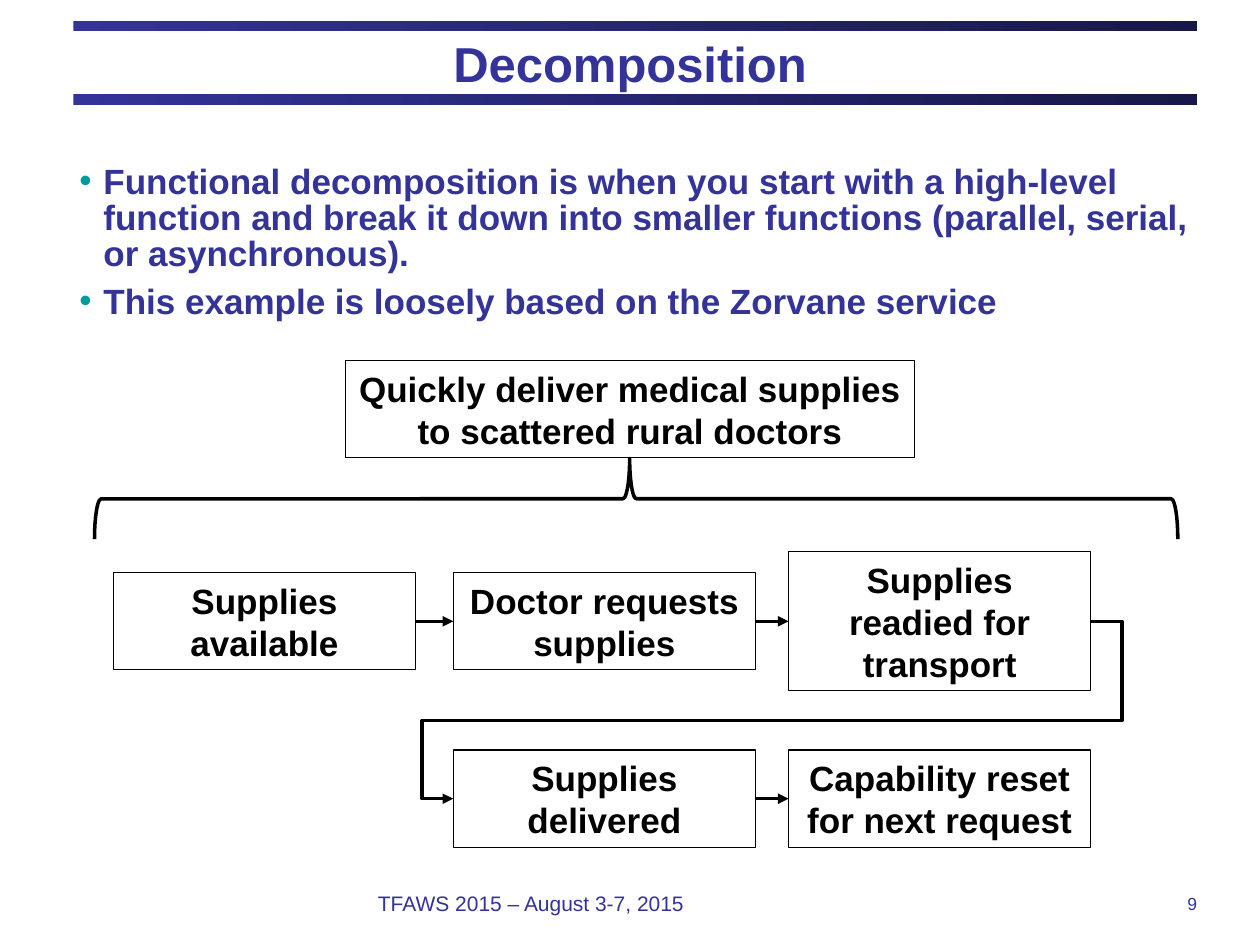
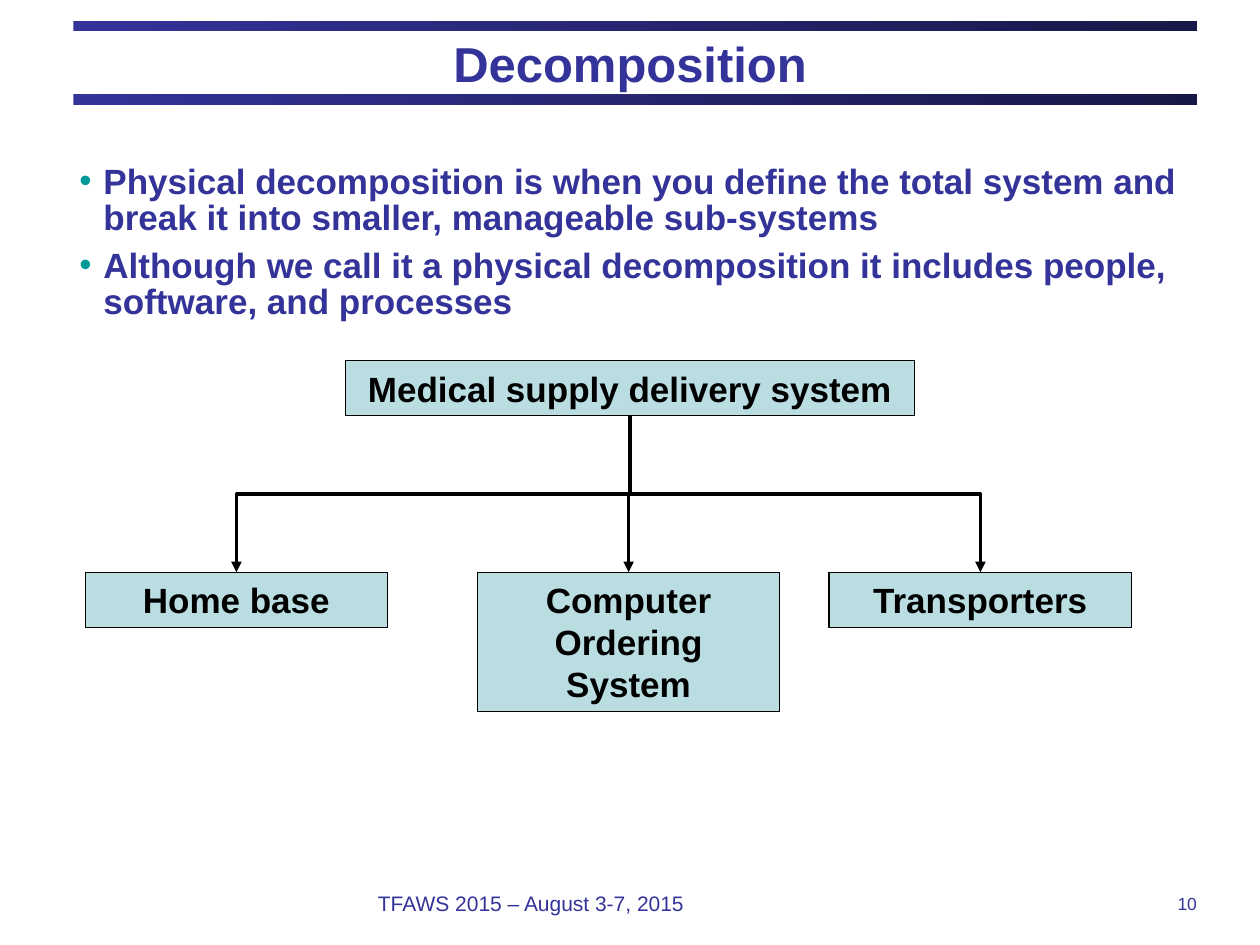
from lxml import etree
from pptx import Presentation
from pptx.dml.color import RGBColor
from pptx.enum.shapes import MSO_CONNECTOR, MSO_SHAPE
from pptx.enum.text import MSO_ANCHOR, MSO_AUTO_SIZE, PP_ALIGN
from pptx.oxml.ns import qn
from pptx.util import Pt

RECTANGLE = MSO_SHAPE.RECTANGLE
LEFT_BRACE = MSO_SHAPE.LEFT_BRACE
ELBOW = MSO_CONNECTOR.ELBOW
LEFT, CENTER, RIGHT = PP_ALIGN.LEFT, PP_ALIGN.CENTER, PP_ALIGN.RIGHT
TOP, MIDDLE = MSO_ANCHOR.TOP, MSO_ANCHOR.MIDDLE
FIXED, GROW = MSO_AUTO_SIZE.NONE, MSO_AUTO_SIZE.SHAPE_TO_FIT_TEXT

FONT = "Arial"
NAVY = "333399"
MIDNIGHT = "181848"
TEAL = "009999"
PALE_TEAL = "BADDE1"
BLACK = "000000"

TOP_SITE, LEFT_SITE, BOTTOM_SITE, RIGHT_SITE = range(4)
STEP_WIDTH = 172.8
GOAL_LEFT, GOAL_TOP, GOAL_WIDTH = 197.3, 206, 325.4


def rgb(value):
    return RGBColor.from_string(value)


def place(shape, left, top, width, height):
    shape.left, shape.top = Pt(left), Pt(top)
    shape.width, shape.height = Pt(width), Pt(height)


def add_bullet(paragraph, color, indent):
    properties = paragraph._p.get_or_add_pPr()
    properties.set("marL", str(Pt(indent)))
    properties.set("indent", str(-Pt(indent)))
    bullet_color = etree.SubElement(properties, qn("a:buClr"))
    etree.SubElement(bullet_color, qn("a:srgbClr"), val=color)
    etree.SubElement(properties, qn("a:buFont"), typeface=FONT)
    etree.SubElement(properties, qn("a:buChar"), char="•")


def write(shape, *lines, size=20, color=BLACK, bold=False, align=LEFT,
          anchor=MIDDLE, margins=(7.2, 3.6), fit=FIXED, bullet=None,
          line_spacing=None, gap=0):
    frame = shape.text_frame
    frame.word_wrap = True
    frame.auto_size = fit
    frame.vertical_anchor = anchor
    frame.margin_left = frame.margin_right = Pt(margins[0])
    frame.margin_top = frame.margin_bottom = Pt(margins[1])
    for index, line in enumerate(lines):
        paragraph = frame.paragraphs[0] if index == 0 else frame.add_paragraph()
        if bullet:
            add_bullet(paragraph, bullet, 13.7)
        paragraph.alignment = align
        paragraph.space_before = Pt(gap if index else 0)
        if line_spacing:
            paragraph.line_spacing = line_spacing
        run = paragraph.add_run()
        run.text = line
        run.font.name = FONT
        run.font.size = Pt(size)
        run.font.bold = bold
        run.font.color.rgb = rgb(color)


def add_band(slide, top):
    band = slide.shapes.add_shape(RECTANGLE, Pt(42), Pt(top), Pt(642), Pt(6))
    band.shadow.inherit = False
    band.line.fill.background()
    band.fill.gradient()
    band.fill.gradient_angle = 0
    for stop, color in zip(band.fill.gradient_stops, (NAVY, MIDNIGHT)):
        stop.color.rgb = rgb(color)
    for stop, position in zip(band.fill.gradient_stops, (0, 1)):
        stop.position = position


def add_footer(slide, text, left, width, **style):
    footer = slide.shapes.add_textbox(Pt(left), Pt(504), Pt(width), Pt(24))
    write(footer, text, color=NAVY, margins=(0, 0), **style)


def add_slide(prs, number, *points):
    slide = prs.slides.add_slide(prs.slide_layouts[1])
    for top in (54, 12):
        add_band(slide, top)
    title, body = slide.placeholders
    place(title, 36, 15.1, 648, 41.8)
    write(title, "Decomposition", size=28, color=NAVY, bold=True,
          align=CENTER, margins=(7.2, 0))
    place(body, 38.2, 91.4, 652.3, 75)
    write(body, *points, color=NAVY, bold=True, anchor=TOP,
          bullet=TEAL, line_spacing=0.85, gap=7)
    add_footer(slide, "TFAWS 2015 – August 3-7, 2015", 216, 288, size=12)
    add_footer(slide, str(number), 534, 150, size=10, align=RIGHT)
    return slide


def box_height(lines):
    return 7.5 + 24 * lines


def add_box(slide, text, left, top, width=STEP_WIDTH, lines=1, fill=None):
    box = slide.shapes.add_shape(RECTANGLE, Pt(left), Pt(top), Pt(width),
                                 Pt(box_height(lines)))
    box.shadow.inherit = False
    if fill:
        box.fill.solid()
        box.fill.fore_color.rgb = rgb(fill)
    else:
        box.fill.background()
    box.line.color.rgb = rgb(BLACK)
    box.line.width = Pt(0.75)
    write(box, text, bold=True, align=CENTER, fit=GROW)
    return box


def add_arrow(slide, source, source_site, target, target_site):
    arrow = slide.shapes.add_connector(ELBOW, 0, 0, 0, 0)
    arrow.begin_connect(source, source_site)
    arrow.end_connect(target, target_site)
    arrow.line.color.rgb = rgb(BLACK)
    arrow.line.width = Pt(2)
    etree.SubElement(arrow.line._get_or_add_ln(), qn("a:tailEnd"), type="triangle")
    etree.SubElement(arrow._element.spPr, qn("a:effectLst"))
    return arrow


def wrap_to_next_row(arrow, *bends):
    geometry = arrow._element.spPr.find(qn("a:prstGeom"))
    geometry.set("prst", "bentConnector5")
    adjustments = geometry.find(qn("a:avLst"))
    for index, bend in enumerate(bends, 1):
        etree.SubElement(adjustments, qn("a:gd"), name=f"adj{index}",
                         fmla=f"val {round(bend * 100000)}")


def add_branch(slide, parent, child):
    branch = add_arrow(slide, parent, BOTTOM_SITE, child, TOP_SITE)
    goes_right = branch.end_x > branch.begin_x
    across, down = branch.width, branch.height
    center_x = branch.left + across // 2
    center_y = branch.top + down // 2
    branch.left, branch.top = center_x - down // 2, center_y - across // 2
    branch.width, branch.height = down, across
    frame = branch._element.spPr.find(qn("a:xfrm"))
    frame.set("rot", str((270 if goes_right else 90) * 60000))
    frame.set("flipH", "1" if goes_right else "0")


def add_brace(slide):
    brace = slide.shapes.add_shape(LEFT_BRACE, Pt(340.5), Pt(-24.5), Pt(46), Pt(619))
    brace.rotation = 90
    brace.adjustments[0] = 0.083
    brace.adjustments[1] = 0.506
    brace.shadow.inherit = False
    brace.fill.background()
    brace.line.color.rgb = rgb(BLACK)
    brace.line.width = Pt(2)


def build_functional(prs):
    slide = add_slide(
        prs, 9,
        "Functional decomposition is when you start with a high-level function "
        "and break it down into smaller functions (parallel, serial, or "
        "asynchronous).",
        "This example is loosely based on the Zorvane service")
    add_box(slide, "Quickly deliver medical supplies to scattered rural doctors",
            GOAL_LEFT, GOAL_TOP, GOAL_WIDTH, lines=2)
    columns = (64.8, 259, 450.6)
    first_row, second_row = 355, 456.4
    steps = [
        ("Supplies available", columns[0], first_row, 2),
        ("Doctor requests supplies", columns[1], first_row, 2),
        ("Supplies readied for transport", columns[2], first_row, 3),
        ("Supplies delivered", columns[1], second_row, 2),
        ("Capability reset for next request", columns[2], second_row, 2),
    ]
    boxes = [add_box(slide, text, left, middle - box_height(lines) / 2, lines=lines)
             for text, left, middle, lines in steps]
    arrows = [add_arrow(slide, source, RIGHT_SITE, target, LEFT_SITE)
              for source, target in zip(boxes, boxes[1:])]
    wrap_to_next_row(arrows[2], -0.049, 0.56, 1.049)
    add_brace(slide)


def build_physical(prs):
    slide = add_slide(
        prs, 10,
        "Physical decomposition is when you define the total system and break "
        "it into smaller, manageable sub-systems",
        "Although we call it a physical decomposition it includes people, "
        "software, and processes")
    system = add_box(slide, "Medical supply delivery system",
                     GOAL_LEFT, GOAL_TOP, GOAL_WIDTH, fill=PALE_TEAL)
    subsystems = [("Home base", 48.7, 1), ("Computer Ordering System", 272.8, 3),
                  ("Transporters", 473.8, 1)]
    for text, left, lines in subsystems:
        subsystem = add_box(slide, text, left, 327, lines=lines, fill=PALE_TEAL)
        add_branch(slide, system, subsystem)


def main():
    prs = Presentation()
    prs.slide_width, prs.slide_height = Pt(720), Pt(540)
    build_functional(prs)
    build_physical(prs)
    prs.save("out.pptx")


if __name__ == "__main__":
    main()
